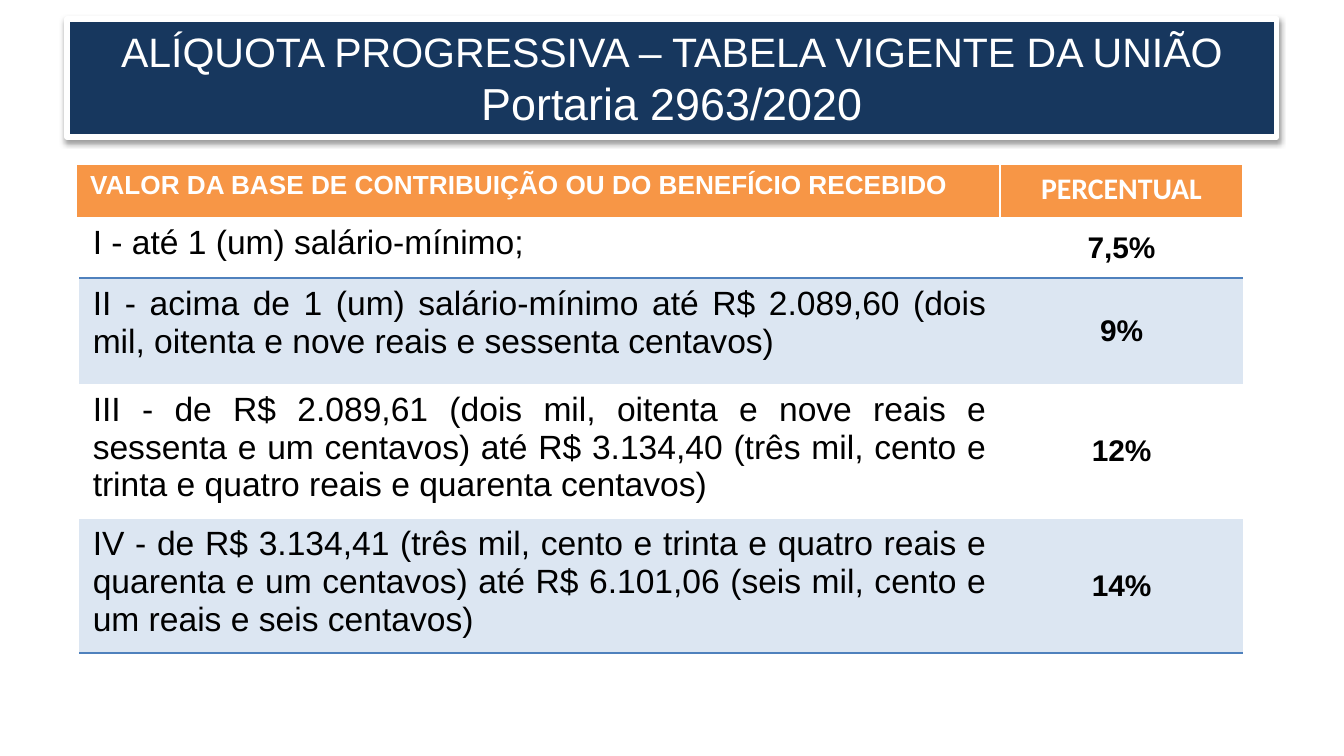
from lxml import etree
from pptx import Presentation
from pptx.dml.color import RGBColor
from pptx.enum.shapes import MSO_SHAPE
from pptx.enum.text import MSO_ANCHOR, PP_ALIGN
from pptx.oxml import parse_xml
from pptx.oxml.ns import nsdecls, qn
from pptx.util import Inches, Pt

NAVY, WHITE, BLACK = "17375E", "FFFFFF", "000000"
ORANGE, BLUE, PALE_BLUE = "F79646", "4F81BD", "DCE6F2"
NO_STYLE = "{2D5ABB26-0587-4C30-8999-92F81FD0307C}"

TITLE = [("ALÍQUOTA PROGRESSIVA – TABELA VIGENTE DA UNIÃO", 22),
         ("Portaria 2963/2020", 24)]
HEADERS = [("VALOR DA BASE DE CONTRIBUIÇÃO OU DO BENEFÍCIO RECEBIDO",
            14, "Arial", PP_ALIGN.LEFT),
           ("PERCENTUAL", 16, "Calibri", PP_ALIGN.CENTER)]
# Text, rate, row height in inches
BRACKETS = [
    ("I - até 1 (um) salário-mínimo;", "7,5%", 0.45),
    ("II - acima de 1 (um) salário-mínimo até R$ 2.089,60 (dois mil, oitenta "
     "e nove reais e sessenta centavos)", "9%", 0.79),
    ("III - de R$ 2.089,61 (dois mil, oitenta e nove reais e sessenta e um "
     "centavos) até R$ 3.134,40 (três mil, cento e trinta e quatro reais e "
     "quarenta centavos)", "12%", 1),
    ("IV - de R$ 3.134,41 (três mil, cento e trinta e quatro reais e quarenta "
     "e um centavos) até R$ 6.101,06 (seis mil, cento e um reais e seis "
     "centavos)", "14%", 1),
]


def rgb(color):
    return RGBColor.from_string(color)


def style_font(font, size, color, name="Arial", bold=False):
    font.size, font.name, font.bold = Pt(size), name, bold
    font.color.rgb = rgb(color)


def add_plain_table(slide, left, top, widths, heights):
    """Add a table with no built-in fills or borders."""
    table = slide.shapes.add_table(
        len(heights), len(widths), Inches(left), Inches(top),
        Inches(sum(widths)), Inches(sum(heights))).table
    table.first_row = table.horz_banding = False
    table._tbl.tblPr.find(qn("a:tableStyleId")).text = NO_STYLE
    for column, width in zip(table.columns, widths):
        column.width = Inches(width)
    for row, height in zip(table.rows, heights):
        row.height = Inches(height)
    return table


def fill_cell(cell, text, size, color, align, fill=None, borders=None, **font):
    """Write one cell; borders maps L, R, T or B to a (colour, points) line."""
    p = cell.text_frame.paragraphs[0]
    p.text, p.alignment = text, align
    style_font(p.font, size, color, **font)
    # Borders come before the fill in the cell properties
    tcPr = cell._tc.get_or_add_tcPr()
    for side, (line, width) in (borders or {}).items():
        tcPr.append(parse_xml(
            f'<a:ln{side} {nsdecls("a")} w="{Pt(width)}"><a:solidFill>'
            f'<a:srgbClr val="{line}"/></a:solidFill></a:ln{side}>'))
    if fill:
        cell.fill.solid()
        cell.fill.fore_color.rgb = rgb(fill)


def add_title(slide):
    sp = slide.shapes.add_shape(MSO_SHAPE.RECTANGLE, Inches(0.5), Inches(0.14),
                                Inches(9), Inches(0.88))
    sp.fill.solid()
    sp.fill.fore_color.rgb = rgb(NAVY)
    sp.line.color.rgb = rgb(WHITE)
    sp.line.width = Pt(3)
    sp.shadow.inherit = False
    effects = sp._element.spPr.find(qn("a:effectLst"))
    shadow = etree.SubElement(effects, qn("a:outerShdw"), blurRad=str(Pt(3.1)),
                              dist=str(Pt(1.6)), dir="5400000", rotWithShape="0")
    color = etree.SubElement(shadow, qn("a:srgbClr"), val=BLACK)
    etree.SubElement(color, qn("a:alpha"), val="38000")

    tf = sp.text_frame
    tf.word_wrap = True
    tf.vertical_anchor = MSO_ANCHOR.MIDDLE
    p = tf.paragraphs[0]
    p.alignment = PP_ALIGN.CENTER
    for i, (text, size) in enumerate(TITLE):
        if i:
            p.add_line_break()
        r = p.add_run()
        r.text = text
        style_font(r.font, size, WHITE)


def add_brackets(slide):
    table = add_plain_table(slide, 0.59, 1.62, [6.85, 1.81],
                            [height for *_, height in BRACKETS])
    rule = (BLUE, 1)
    ruled_rows = {0: {"T": rule, "B": rule}, len(BRACKETS) - 1: {"B": rule}}
    for i, (text, rate, _) in enumerate(BRACKETS):
        look = dict(fill=PALE_BLUE if i % 2 else None, borders=ruled_rows.get(i))
        fill_cell(table.cell(i, 0), text, 18, BLACK, PP_ALIGN.JUSTIFY, **look)
        rate_cell = table.cell(i, 1)
        rate_cell.vertical_anchor = MSO_ANCHOR.MIDDLE
        fill_cell(rate_cell, rate, 16, BLACK, PP_ALIGN.CENTER, bold=True, **look)


def add_headers(slide):
    table = add_plain_table(slide, 0.57, 1.22, [6.87, 1.81], [0.41])
    borders = dict.fromkeys("LRT", (WHITE, 1)) | {"B": (WHITE, 3)}
    for i, (text, size, name, align) in enumerate(HEADERS):
        fill_cell(table.cell(0, i), text, size, WHITE, align, fill=ORANGE,
                  borders=borders, name=name, bold=True)


def main():
    prs = Presentation()
    prs.slide_width = Inches(10)
    prs.slide_height = prs.slide_width * 9 // 16
    slide = prs.slides.add_slide(prs.slide_layouts[6])
    add_title(slide)
    add_brackets(slide)
    add_headers(slide)
    prs.save("out.pptx")


if __name__ == "__main__":
    main()
